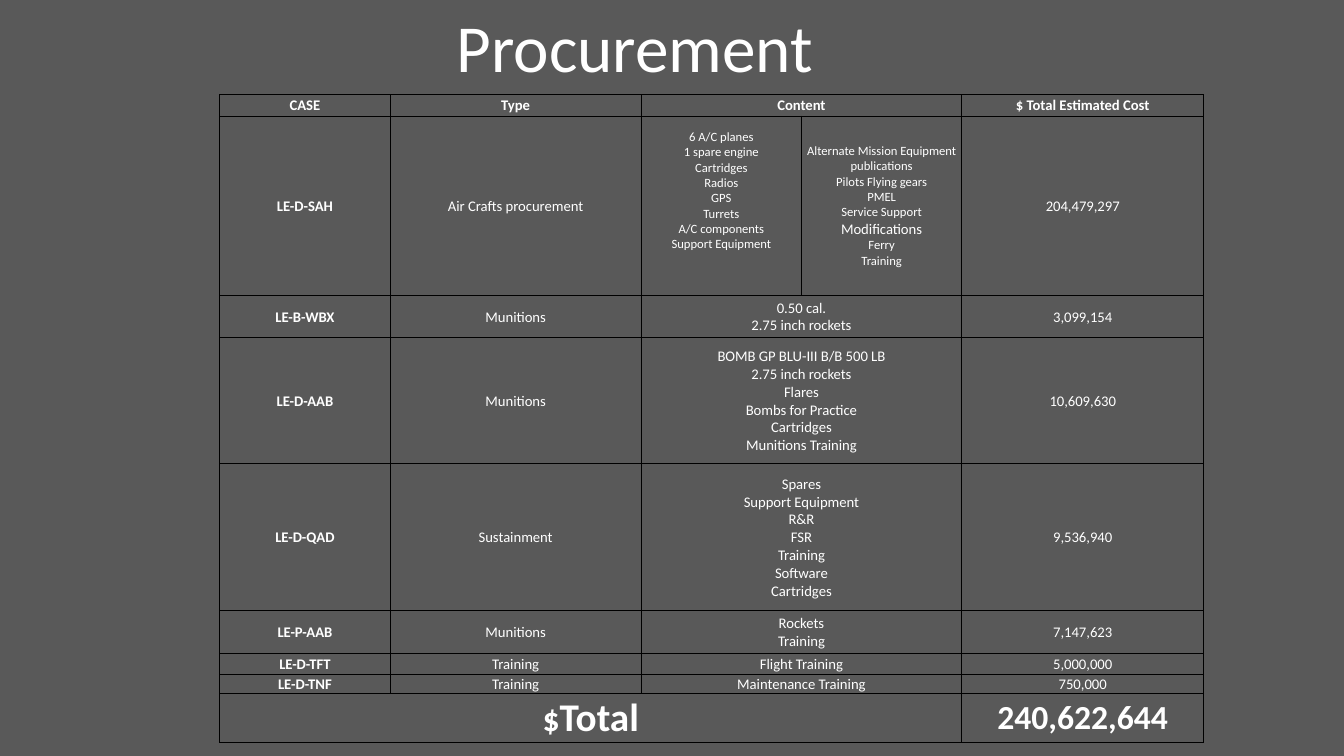
from pptx import Presentation
from pptx import util as u
from pptx.dml.color import RGBColor
from pptx.enum import text
from pptx.oxml import parse_xml
from pptx.oxml.ns import nsdecls

GREY = RGBColor(0x59, 0x59, 0x59)
WHITE = RGBColor(0xFF, 0xFF, 0xFF)
BLACK = RGBColor(0, 0, 0)
FONT = "Calibri"
BODY, SMALL = 10.5, 9

COLS = [1.69, 2.49, 1.59, 1.59, 2.4]
ROWS = [0.21, 1.78, 0.42, 1.25, 1.46, 0.42, 0.21, 0.18, 0.48]
HEADER = ["CASE", "Type", "Content", "$ Total Estimated Cost"]
AIRCRAFT = ["6 A/C planes", "1 spare engine", "Cartridges", "Radios", "GPS",
            "Turrets", "A/C components", "Support Equipment"]
SERVICES = ["Alternate Mission Equipment", "publications", "Pilots Flying gears",
            "PMEL", "Service Support", "Modifications", "Ferry", "Training"]
# Case, type, content lines, cost
CASES = [
    ("LE-D-SAH", "Air Crafts procurement", None, "204,479,297"),
    ("LE-B-WBX", "Munitions", ["0.50 cal.", "2.75 inch rockets"], "3,099,154"),
    ("LE-D-AAB", "Munitions",
     ["BOMB GP BLU-III B/B 500 LB", "2.75 inch rockets", "Flares",
      "Bombs for Practice", "Cartridges", "Munitions Training"], "10,609,630"),
    ("LE-D-QAD", "Sustainment",
     ["Spares", "Support Equipment", "R&R", "FSR", "Training", "Software",
      "Cartridges"], "9,536,940"),
    ("LE-P-AAB", "Munitions", ["Rockets", "Training"], "7,147,623"),
    ("LE-D-TFT", "Training", ["Flight Training"], "5,000,000"),
    ("LE-D-TNF", "Training", ["Maintenance Training"], "750,000"),
]


def add_run(p, words, size, bold=False):
    p.alignment = text.PP_ALIGN.CENTER
    r = p.add_run()
    r.text = words
    r.font.name, r.font.size, r.font.bold = FONT, u.Pt(size), bold
    r.font.color.rgb = WHITE


def add_lines(cell, lines, bold=False):
    """Write (words, size) pairs, one paragraph each."""
    tf = cell.text_frame
    for i, (words, size) in enumerate(lines):
        p = tf.add_paragraph() if i else tf.paragraphs[0]
        add_run(p, words, size, bold)


def format_cell(cell):
    cell.margin_left = cell.margin_right = cell.margin_top = u.Inches(0.01)
    cell.margin_bottom = 0
    cell.vertical_anchor = text.MSO_ANCHOR.MIDDLE
    tcPr = cell._tc.get_or_add_tcPr()
    for side in ("lnL", "lnR", "lnT", "lnB"):
        tcPr.append(parse_xml(
            f'<a:{side} {nsdecls("a")} w="{u.Pt(0.5)}"><a:solidFill>'
            f'<a:srgbClr val="{BLACK}"/></a:solidFill></a:{side}>'))
    cell.fill.background()


def add_title(s, left, top, width, height):
    sp = s.shapes.title
    sp.left, sp.top, sp.width, sp.height = map(u.Inches, (left, top, width, height))
    tf = sp.text_frame
    tf.word_wrap = True
    tf.vertical_anchor = text.MSO_ANCHOR.TOP
    add_run(tf.paragraphs[0], "Procurement", 48)


def add_cost_table(s, left, top):
    sp = s.shapes.add_table(len(ROWS), len(COLS), u.Inches(left), u.Inches(top),
                            u.Inches(sum(COLS)), u.Inches(sum(ROWS)))
    tbl = sp.table
    tbl.first_row = tbl.horz_banding = False
    for col, width in zip(tbl.columns, COLS):
        col.width = u.Inches(width)
    for row, height in zip(tbl.rows, ROWS):
        row.height = u.Inches(height)
        for cell in row.cells:
            format_cell(cell)

    # Header
    for c, words in zip((0, 1, 2, 4), HEADER):
        add_lines(tbl.cell(0, c), [(words, BODY)], True)
    tbl.cell(0, 2).merge(tbl.cell(0, 3))

    # Cases
    for r, (case, kind, content, cost) in enumerate(CASES, 1):
        add_lines(tbl.cell(r, 0), [(case, BODY)], True)
        add_lines(tbl.cell(r, 1), [(kind, BODY)])
        add_lines(tbl.cell(r, 4), [(cost, BODY)])
        if content:
            tbl.cell(r, 2).merge(tbl.cell(r, 3))
            add_lines(tbl.cell(r, 2), [(line, BODY) for line in content])

    # Split content of the aircraft case
    add_lines(tbl.cell(1, 2), [(line, SMALL) for line in AIRCRAFT])
    tbl.cell(1, 2).margin_bottom = u.Inches(0.3)
    add_lines(tbl.cell(1, 3), [(line, BODY if line == "Modifications" else SMALL)
                               for line in SERVICES])

    # Total
    last = len(ROWS) - 1
    total = tbl.cell(last, 0)
    total.merge(tbl.cell(last, 3))
    total.vertical_anchor = text.MSO_ANCHOR.BOTTOM
    p = total.text_frame.paragraphs[0]
    add_run(p, "$", 24, True)
    add_run(p, "Total", 28, True)
    add_lines(tbl.cell(last, 4), [("240,622,644", 24)], True)


def main():
    prs = Presentation()
    prs.slide_width, prs.slide_height = u.Inches(13.33), u.Inches(7.5)
    s = prs.slides.add_slide(prs.slide_layouts[5])
    s.background.fill.solid()
    s.background.fill.fore_color.rgb = GREY
    add_cost_table(s, 2.18, 0.94)
    add_title(s, 3.04, 0, 6.52, 0.91)
    prs.save("out.pptx")


if __name__ == "__main__":
    main()
